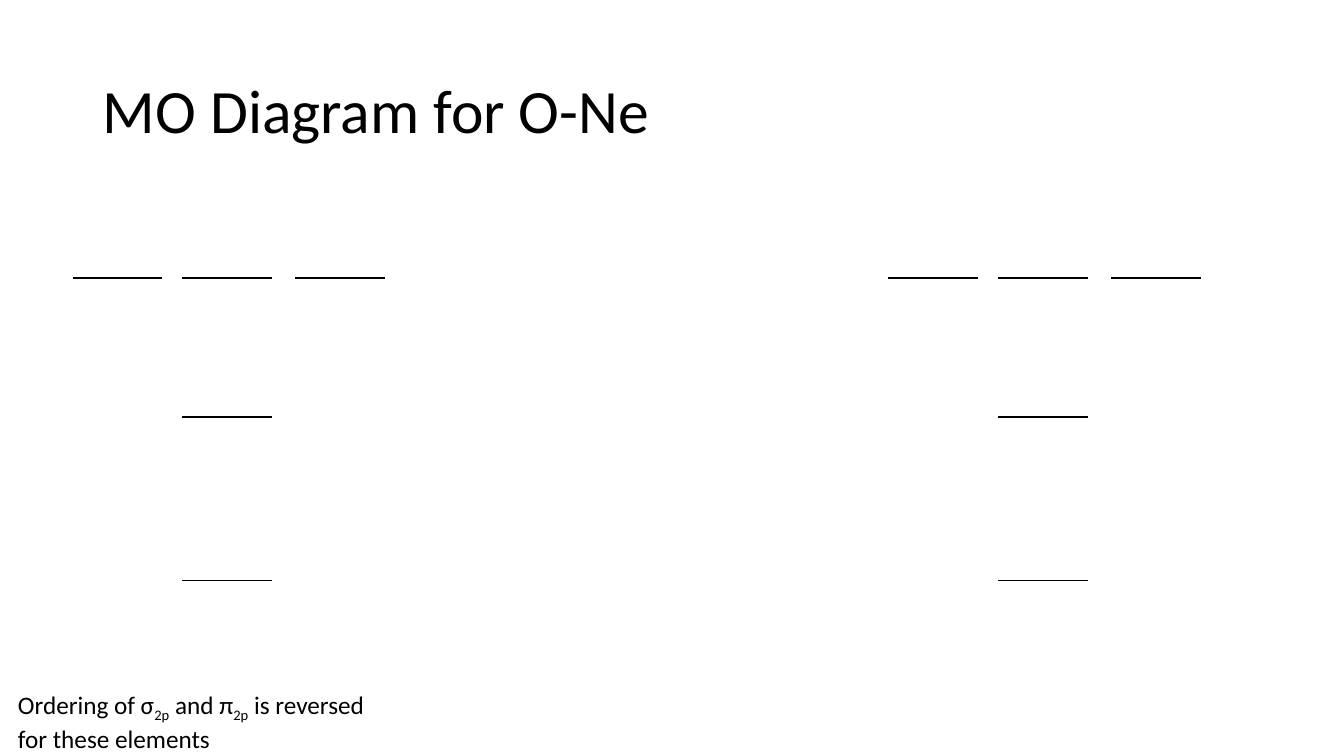
from dataclasses import dataclass

from lxml import etree
from pptx import Presentation
from pptx.dml.color import RGBColor
from pptx.enum.shapes import MSO_CONNECTOR as Link
from pptx.enum.text import MSO_ANCHOR as Anchor, MSO_AUTO_SIZE as Fit, PP_ALIGN as Align
from pptx.oxml.ns import qn
from pptx.shapes.shapetree import GroupShapes
from pptx.text.text import Font
from pptx.util import Inches, Pt

INK = "000000"
WIDTH = 0.89  # length of one orbital line


@dataclass(frozen=True)
class Level:
    y: float
    steps: tuple[float, ...]  # offsets from the atom's left edge


@dataclass(frozen=True)
class Part:
    text: str
    sub: bool = False


LEVELS = (
    Level(5.76, (1.09,)),
    Level(4.14, (1.09,)),
    Level(2.76, (0, 1.09, 2.21)),
)
ATOMS = (0.72, 8.81)
NOTE = (
    Part("Ordering of σ"),
    Part("2p", True),
    Part(" and π"),
    Part("2p", True),
    Part(" is reversed for these elements"),
)


def color(code: str) -> RGBColor:
    return RGBColor.from_string(code)


def style(font: Font, size: float) -> None:
    font.name = "Calibri"
    font.size = Pt(size)
    font.color.rgb = color(INK)


def draw_line(shapes: GroupShapes, x: float, y: float) -> None:
    line = shapes.add_connector(
        Link.STRAIGHT, Inches(x), Inches(y), Inches(x + WIDTH), Inches(y)
    )
    line.line.color.rgb = color(INK)
    line.line.width = Pt(1.25)
    etree.SubElement(line._element.spPr, qn("a:effectLst"))


def draw_atom(slide, left: float) -> None:
    group = slide.shapes.add_group_shape()
    for level in LEVELS:
        for step in level.steps:
            draw_line(group.shapes, left + step, level.y)


def draw_title(slide) -> None:
    title = slide.shapes.title
    title.left, title.top = Inches(0.92), Inches(0.4)
    title.width, title.height = Inches(11.5), Inches(1.45)
    frame = title.text_frame
    frame.text = "MO Diagram for O-Ne"
    frame.vertical_anchor = Anchor.MIDDLE
    para = frame.paragraphs[0]
    para.alignment = Align.LEFT
    para.line_spacing = 0.9
    style(para.runs[0].font, 44)


def draw_note(slide) -> None:
    box = slide.shapes.add_textbox(
        Inches(0.08), Inches(6.79), Inches(3.64), Inches(0.71)
    )
    frame = box.text_frame
    frame.word_wrap = True
    frame.auto_size = Fit.SHAPE_TO_FIT_TEXT
    for part in NOTE:
        run = frame.paragraphs[0].add_run()
        run.text = part.text
        style(run.font, 18)
        if part.sub:
            run._r.get_or_add_rPr().set("baseline", "-25000")


def main() -> None:
    deck = Presentation()
    deck.slide_width, deck.slide_height = Inches(13.33), Inches(7.5)
    slide = deck.slides.add_slide(deck.slide_layouts[5])
    draw_title(slide)
    for left in ATOMS:
        draw_atom(slide, left)
    draw_note(slide)
    deck.save("out.pptx")


if __name__ == "__main__":
    main()
